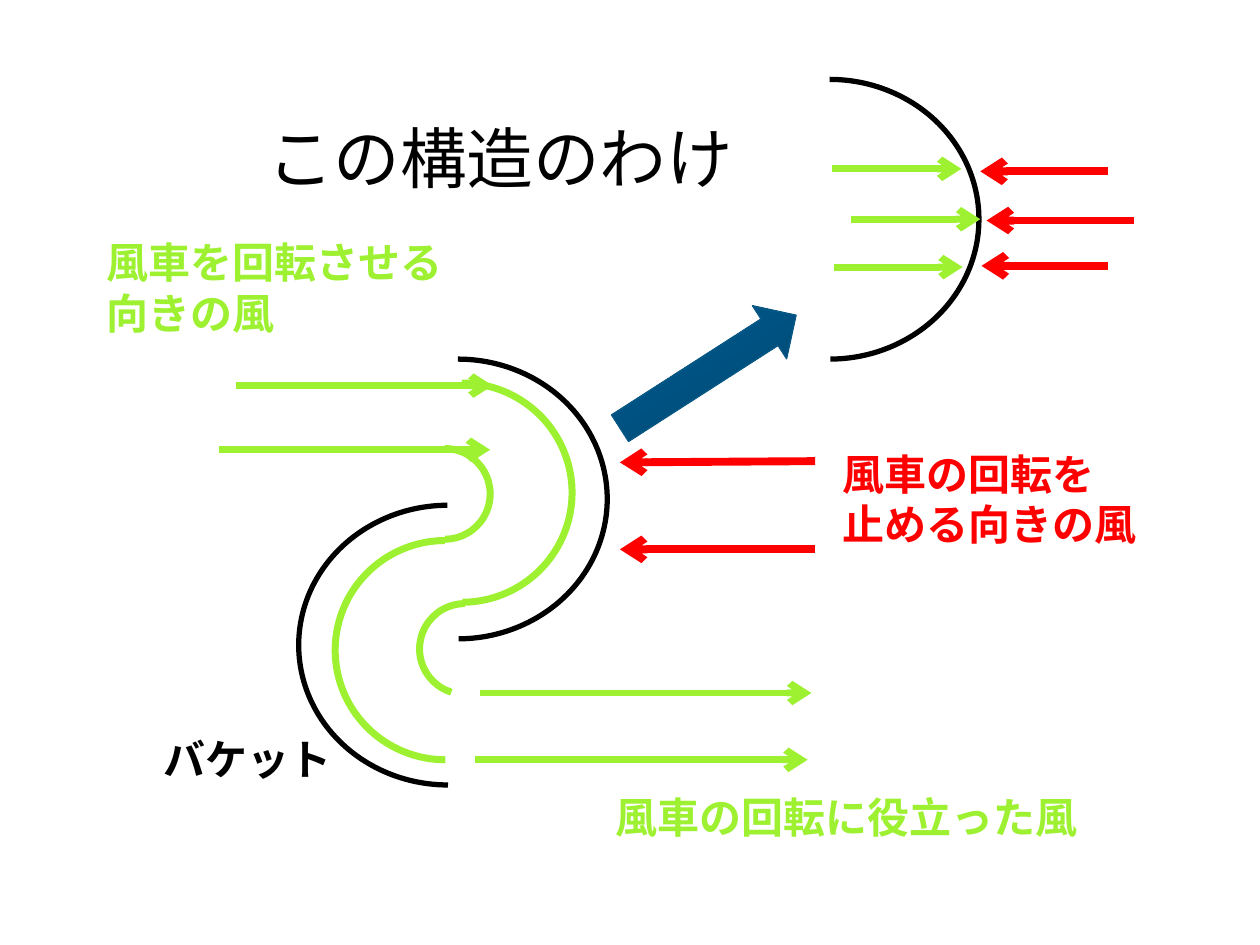
import dataclasses
import typing

import lxml.etree
import pptx
import pptx.dml.color
import pptx.enum.dml
import pptx.enum.shapes
import pptx.enum.text
import pptx.oxml.ns
import pptx.util

WIDE, HIGH = pptx.util.Inches(10), pptx.util.Inches(7.5)
COLS, ROWS = 100, 75
BLACK, GREEN, RED = "000000", "9DF131", "FF0000"
FONT = "Karla"


@dataclasses.dataclass
class Arc:
    """A half circle, with its box in columns and rows."""
    left: float
    top: float
    wide: float
    high: float
    tint: str
    thick: float
    turn: float = 0
    start: float = 162


@dataclasses.dataclass
class Wind:
    """A wind arrow from its start to its tip, in columns and rows."""
    left: float
    top: float
    tip: float
    low: float
    tint: str


@dataclasses.dataclass
class Label:
    """A bold label, with its box in columns and rows."""
    left: float
    top: float
    wide: float
    high: float
    tint: str
    lines: tuple[str, ...]


BOWL = (23.7, 22.2)
FLOW = (17.5, 17.4)
CURL = (7.2, 7.2)

ARCS = (
    Arc(24.5, 28.5, *BOWL, BLACK, 3),
    Arc(23.7, 40.1, *BOWL, BLACK, 3, 180),
    Arc(27.9, 30.4, *FLOW, GREEN, 4),
    Arc(26.6, 42.9, *FLOW, GREEN, 4, 180),
    Arc(31.7, 35.6, *CURL, GREEN, 4),
    Arc(33.3, 47.9, *CURL, GREEN, 4, 180, 172.45),
    Arc(54, 6.3, *BOWL, BLACK, 3),
)

WINDS = (
    Wind(17.4, 35.7, 38.9, 35.7, GREEN),
    Wind(18.7, 30.6, 39.1, 30.6, GREEN),
    Wind(64.7, 36.6, 49.2, 36.7, RED),
    Wind(64.7, 43.6, 49.2, 43.6, RED),
    Wind(38.1, 55, 64.4, 55, GREEN),
    Wind(37.7, 60.3, 64.1, 60.3, GREEN),
    Wind(66, 13.4, 76.3, 13.4, GREEN),
    Wind(67.5, 17.4, 77.8, 17.4, GREEN),
    Wind(66.2, 21.2, 76.4, 21.2, GREEN),
    Wind(87.9, 13.6, 77.8, 13.6, RED),
    Wind(90, 17.5, 78.3, 17.5, RED),
    Wind(87.9, 21.1, 77.9, 21.1, RED),
)

LABELS = (
    Label(65.9, 35.1, 25.6, 9.1, RED, ("風車の回転を", "止める向きの風")),
    Label(7.5, 18.3, 29.4, 9.1, GREEN, ("風車を回転させる向きの風",)),
    Label(47.9, 62.3, 41.3, 5, GREEN, ("風車の回転に役立った風",)),
    Label(12, 57.7, 18, 5, BLACK, ("バケット",)),
)


def col(n: float) -> int:
    """Return the length of n columns."""
    return round(WIDE * n / COLS)


def row(n: float) -> int:
    """Return the length of n rows."""
    return round(HIGH * n / ROWS)


def box(left: float, top: float, wide: float, high: float) -> tuple[int, ...]:
    """Return a box of the grid as lengths."""
    return col(left), row(top), col(wide), row(high)


def paint(part: typing.Any, tint: str) -> None:
    """Give a colour format the hex colour."""
    part.rgb = pptx.dml.color.RGBColor.from_string(tint)


def style(para: typing.Any, size: float, tint: str, bold: bool) -> None:
    """Set the font of a paragraph."""
    para.font.name = FONT
    para.font.size = pptx.util.Pt(size)
    para.font.bold = bold
    paint(para.font.color, tint)


def draw_arc(slide: typing.Any, arc: Arc) -> None:
    """Draw one open half circle."""
    shape = slide.shapes.add_shape(
        pptx.enum.shapes.MSO_SHAPE.ARC, *box(arc.left, arc.top, arc.wide, arc.high))
    shape.adjustments[0], shape.adjustments[1] = arc.start, 53.83
    shape.rotation = arc.turn
    shape.shadow.inherit = False
    shape.fill.background()
    shape.line.width = pptx.util.Pt(arc.thick)
    paint(shape.line.color, arc.tint)


def draw_wind(slide: typing.Any, wind: Wind) -> None:
    """Draw one arrow with an open head at its tip."""
    line = slide.shapes.add_connector(
        pptx.enum.shapes.MSO_CONNECTOR.STRAIGHT,
        col(wind.left), row(wind.top), col(wind.tip), row(wind.low))
    line.line.width = pptx.util.Pt(4.5 if wind.tint == RED else 4)
    paint(line.line.color, wind.tint)
    qn = pptx.oxml.ns.qn
    props = line.element.find(qn("p:spPr"))
    lxml.etree.SubElement(props.find(qn("a:ln")), qn("a:tailEnd"), type="arrow")
    lxml.etree.SubElement(props, qn("a:effectLst"))


def draw_label(slide: typing.Any, label: Label) -> None:
    """Write one label, a paragraph to each line."""
    shape = slide.shapes.add_textbox(*box(label.left, label.top, label.wide, label.high))
    frame = shape.text_frame
    frame.word_wrap = True
    frame.text = "\n".join(label.lines)
    for para in frame.paragraphs:
        style(para, 24, label.tint, True)


def draw_block(slide: typing.Any) -> None:
    """Draw the broad arrow that leads to the closer view."""
    shape = slide.shapes.add_shape(
        pptx.enum.shapes.MSO_SHAPE.RIGHT_ARROW, *box(47.9, 27, 16.6, 5))
    shape.rotation = 327.3
    shape.shadow.inherit = False
    shape.fill.gradient()
    shape.fill.gradient_angle = 90
    for stop, (place, tint) in zip(
            shape.fill.gradient_stops, ((0, "00456D"), (0.8, "00598D"))):
        stop.position = place
        paint(stop.color, tint)
    shape.line.width = pptx.util.Pt(0.75)
    paint(shape.line.color, "095886")


def draw_title(slide: typing.Any) -> None:
    """Place and write the title."""
    title = slide.shapes.title
    title.left, title.top, title.width, title.height = box(20.2, 7.9, 41.1, 8.2)
    frame = title.text_frame
    frame.text = "この構造のわけ"
    frame.auto_size = pptx.enum.text.MSO_AUTO_SIZE.NONE
    frame.vertical_anchor = pptx.enum.text.MSO_ANCHOR.BOTTOM
    para = frame.paragraphs[0]
    para.alignment = pptx.enum.text.PP_ALIGN.LEFT
    style(para, 38, BLACK, False)


def main() -> None:
    """Build the slide and save it."""
    deck = pptx.Presentation()
    deck.slide_width, deck.slide_height = WIDE, HIGH
    slide = deck.slides.add_slide(deck.slide_layouts.get_by_name("Title Only"))
    draw_title(slide)
    for arc in ARCS:
        draw_arc(slide, arc)
    for wind in WINDS:
        draw_wind(slide, wind)
    for label in LABELS:
        draw_label(slide, label)
    draw_block(slide)
    deck.save("out.pptx")


if __name__ == "__main__":
    main()
